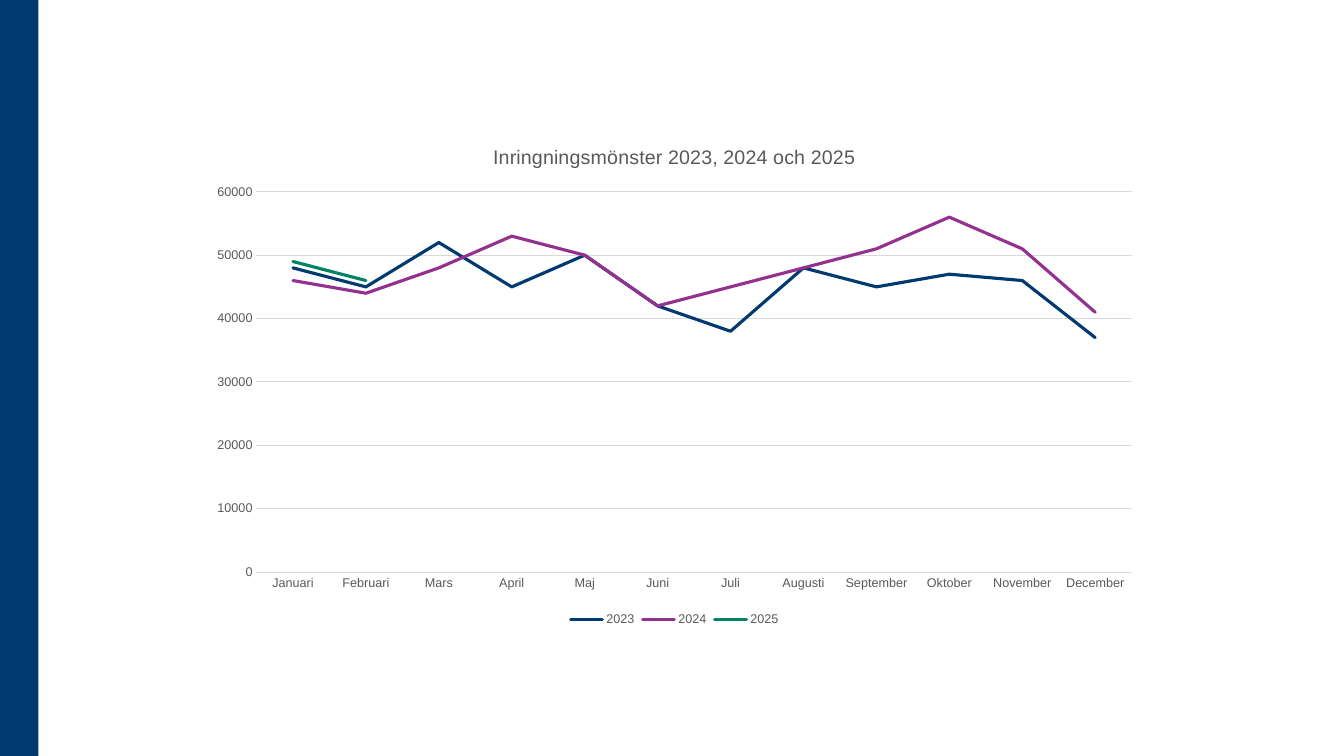
from dataclasses import dataclass

from pptx import Presentation
from pptx.chart.data import CategoryChartData
from pptx.dml.color import RGBColor
from pptx.enum.chart import XL_CHART_TYPE as ChartType
from pptx.enum.chart import XL_LEGEND_POSITION as LegendPosition
from pptx.enum.chart import XL_MARKER_STYLE as Marker
from pptx.enum.chart import XL_TICK_MARK as Tick
from pptx.enum.shapes import MSO_SHAPE as Shape
from pptx.util import Cm, Pt

SLIDE_WIDTH, SLIDE_HEIGHT = Cm(33.87), Cm(19.05)

TITLE = "Inringningsmönster 2023, 2024 och 2025"
MONTHS = ["Januari", "Februari", "Mars", "April", "Maj", "Juni", "Juli",
          "Augusti", "September", "Oktober", "November", "December"]
CALLS = {
    "2023": [48000, 45000, 52000, 45000, 50000, 42000,
             38000, 48000, 45000, 47000, 46000, 37000],
    "2024": [46000, 44000, 48000, 53000, 50000, 42000,
             45000, 48000, 51000, 56000, 51000, 41000],
    "2025": [49000, 46000] + [None] * 10,
}


@dataclass(frozen=True)
class Theme:
    font: str = "Arial"
    navy: str = "003A70"
    purple: str = "93328E"
    green: str = "008264"
    text: str = "595959"
    grid: str = "D9D9D9"
    title_size: float = 14
    base_size: float = 10
    label_size: float = 9
    series_width: float = 2.25
    grid_width: float = 0.75


class SlideBuilder:
    def __init__(self, slide, theme):
        self.slide = slide
        self.theme = theme

    def style_font(self, font, size):
        font.name = self.theme.font
        font.size = Pt(size)
        font.bold = False
        font.color.rgb = RGBColor.from_string(self.theme.text)

    def style_line(self, line, color, width):
        line.color.rgb = RGBColor.from_string(color)
        line.width = Pt(width)

    def band(self, left, top, width, height, color):
        band = self.slide.shapes.add_shape(
            Shape.RECTANGLE, left, top, width, height)
        band.shadow.inherit = False
        band.fill.solid()
        band.fill.fore_color.rgb = RGBColor.from_string(color)
        band.line.fill.background()

    def line_chart(self, left, top, width, height, title, categories, series, colors):
        theme = self.theme
        figures = CategoryChartData(number_format="General")
        figures.categories = categories
        for name, values in series.items():
            figures.add_series(name, values)
        chart = self.slide.shapes.add_chart(
            ChartType.LINE, left, top, width, height, figures).chart
        self.style_font(chart.font, theme.base_size)

        # Title and legend
        heading = chart.chart_title.text_frame
        heading.text = title
        self.style_font(heading.paragraphs[0].runs[0].font, theme.title_size)
        chart.chart_title.include_in_layout = False
        chart.has_legend = True
        chart.legend.position = LegendPosition.BOTTOM
        chart.legend.include_in_layout = False
        self.style_font(chart.legend.font, theme.label_size)

        # Axes and gridlines
        months, calls = chart.category_axis, chart.value_axis
        for axis in (months, calls):
            axis.major_tick_mark = axis.minor_tick_mark = Tick.NONE
            self.style_font(axis.tick_labels.font, theme.label_size)
        self.style_line(months.format.line, theme.grid, theme.grid_width)
        calls.format.line.fill.background()
        calls.minimum_scale, calls.maximum_scale = 0, 60000
        calls.major_unit = 10000
        calls.has_major_gridlines = True
        self.style_line(calls.major_gridlines.format.line,
                        theme.grid, theme.grid_width)

        # One line per year
        chart.plots[0].vary_by_categories = False
        for year, color in zip(chart.plots[0].series, colors):
            year.smooth = False
            year.marker.style = Marker.NONE
            self.style_line(year.format.line, color, theme.series_width)
            year.format.line._get_or_add_ln().set("cap", "rnd")


def main():
    deck = Presentation()
    deck.slide_width, deck.slide_height = SLIDE_WIDTH, SLIDE_HEIGHT
    theme = Theme()
    page = SlideBuilder(deck.slides.add_slide(deck.slide_layouts[6]), theme)

    # Side band
    page.band(0, 0, Cm(0.97), SLIDE_HEIGHT, theme.navy)

    # Calls per month
    page.line_chart(Cm(5), Cm(3.15), Cm(24), Cm(12.75), TITLE, MONTHS, CALLS,
                    (theme.navy, theme.purple, theme.green))

    deck.save("out.pptx")


if __name__ == "__main__":
    main()
